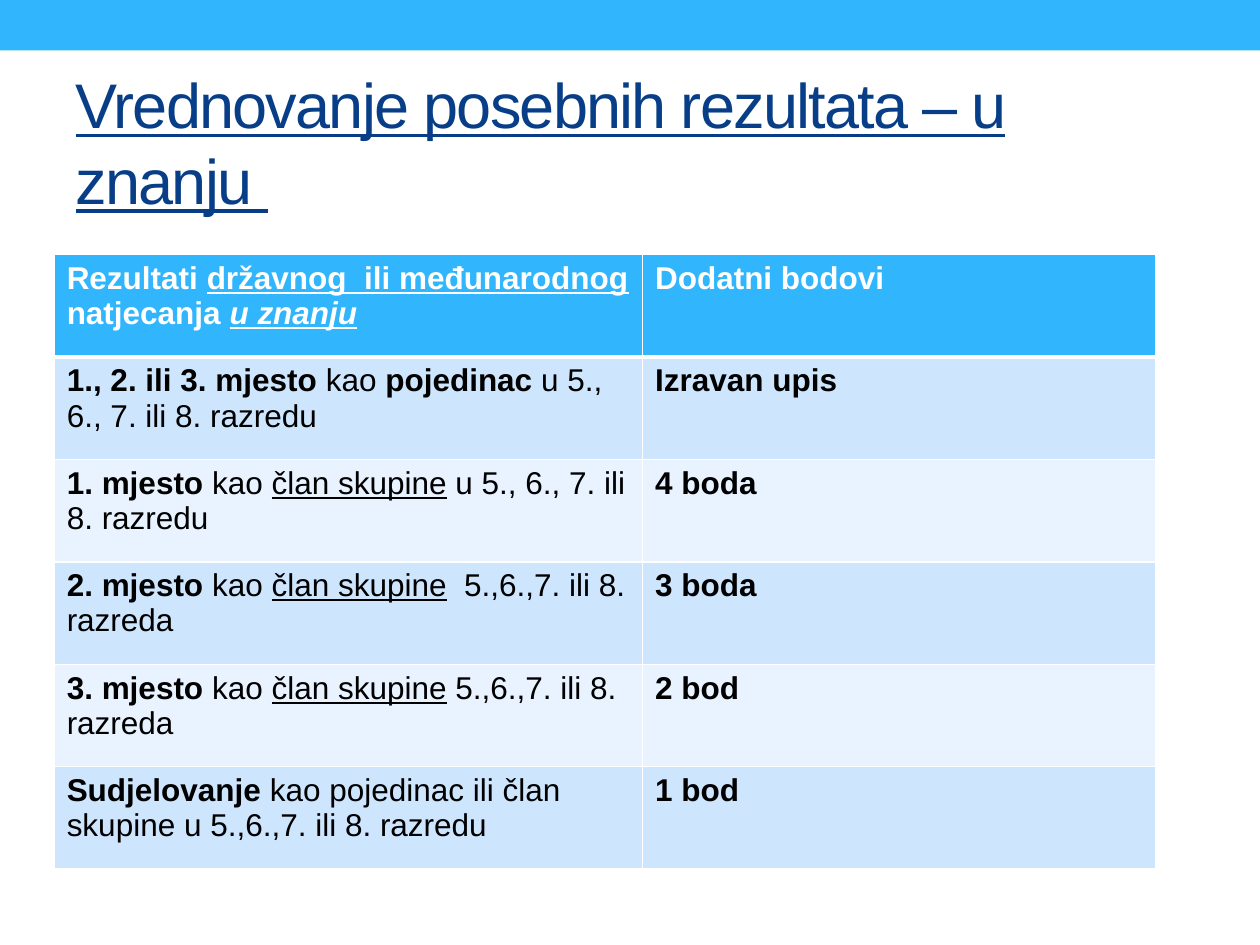
"""Build a slide with a table of points for special results in knowledge competitions."""
import pptx
import pptx.dml.color
import pptx.enum.shapes
import pptx.enum.text
import pptx.oxml
import pptx.oxml.ns
import pptx.util
from pptx.util import Inches

FONT = "Arial"
SKY, NAVY, WHITE, BLACK = "31B6FD", "073E87", "FFFFFF", "000000"
BANDS = ("CEE5FE", "E8F3FF")

# Each run is a text and its style letters: b bold, i italic, u underlined.
HEADER = (
    [("Rezultati ", "b"), ("državnog  ili međunarodnog", "bu"),
     (" natjecanja ", "b"), ("u znanju", "biu")],
    "Dodatni bodovi",
)


def group_result(place, grades):
    """Return the runs for a place won as a member of a group."""
    return [(f"{place}. mjesto ", "b"), ("kao ", ""), ("član skupine", "u"), (grades, "")]


RESULTS = [
    ([("1., 2. ili 3. mjesto ", "b"), ("kao ", ""), ("pojedinac ", "b"),
      ("u 5., 6., 7. ili 8. razredu", "")], "Izravan upis"),
    (group_result(1, " u 5., 6., 7. ili 8. razredu"), "4 boda"),
    (group_result(2, "  5.,6.,7. ili 8. razreda"), "3 boda"),
    (group_result(3, " 5.,6.,7. ili 8. razreda"), "2 bod"),
    ([("Sudjelovanje ", "b"),
      ("kao pojedinac ili član skupine u 5.,6.,7. ili 8. razredu", "")], "1 bod"),
]


def rgb(color):
    """Turn a hex string into a colour."""
    return pptx.dml.color.RGBColor.from_string(color)


def add_top_band(slide):
    """Draw the coloured band along the top edge."""
    band = slide.shapes.add_shape(
        pptx.enum.shapes.MSO_SHAPE.RECTANGLE, 0, 0, Inches(10), Inches(0.4))
    band.shadow.inherit = False
    band.fill.solid()
    band.fill.fore_color.rgb = rgb(SKY)
    band.line.fill.background()


def set_title(slide, text):
    """Place and format the title."""
    title = slide.shapes.title
    title.left, title.top = Inches(0.5), Inches(0.58)
    title.width, title.height = Inches(9), Inches(1.08)
    frame = title.text_frame
    frame.text = text
    frame.auto_size = pptx.enum.text.MSO_AUTO_SIZE.NONE
    frame.vertical_anchor = pptx.enum.text.MSO_ANCHOR.MIDDLE
    paragraph = frame.paragraphs[0]
    paragraph.alignment = pptx.enum.text.PP_ALIGN.LEFT
    paragraph.font.name = FONT
    paragraph.font.size = pptx.util.Pt(36)
    paragraph.font.underline = True
    paragraph.font.color.rgb = rgb(NAVY)
    paragraph.runs[0].font._element.set("spc", "-100")


def set_borders(cell, bottom):
    """Give a cell white borders, with the bottom width in points."""
    properties = cell._tc.get_or_add_tcPr()
    widths = {"lnL": 1, "lnR": 1, "lnT": 1, "lnB": bottom}
    for position, (side, width) in enumerate(widths.items()):
        properties.insert(position, pptx.oxml.parse_xml(
            f'<a:{side} {pptx.oxml.ns.nsdecls("a")} w="{pptx.util.Pt(width)}">'
            f'<a:solidFill><a:srgbClr val="{WHITE}"/></a:solidFill></a:{side}>'))


def fill_cell(cell, runs, background, color, bottom=1):
    """Write styled runs into a cell and colour it."""
    cell.fill.solid()
    cell.fill.fore_color.rgb = rgb(background)
    set_borders(cell, bottom)
    paragraph = cell.text_frame.paragraphs[0]
    for text, style in runs:
        run = paragraph.add_run()
        run.text = text
        run.font.name = FONT
        run.font.size = pptx.util.Pt(18)
        run.font.color.rgb = rgb(color)
        run.font.bold = "b" in style
        run.font.italic = "i" in style
        run.font.underline = "u" in style


def add_points_table(slide):
    """Add the table of results and their points."""
    rows = [HEADER, *RESULTS]
    table = slide.shapes.add_table(
        len(rows), 2, Inches(0.43), Inches(2.02), Inches(8.74), Inches(4.88)).table
    for column, width in zip(table.columns, (4.67, 4.07)):
        column.width = Inches(width)
    for index, (result, points) in enumerate(rows):
        if index == 0:
            look = (SKY, WHITE, 3)
        else:
            look = (BANDS[(index - 1) % 2], BLACK)
        fill_cell(table.cell(index, 0), result, *look)
        fill_cell(table.cell(index, 1), [(points, "b")], *look)


def main():
    """Build and save the slide."""
    presentation = pptx.Presentation()
    presentation.slide_width, presentation.slide_height = Inches(10), Inches(7.5)
    slide = presentation.slides.add_slide(presentation.slide_layouts[5])
    add_top_band(slide)
    set_title(slide, "Vrednovanje posebnih rezultata – u znanju ")
    add_points_table(slide)
    presentation.save("out.pptx")


if __name__ == "__main__":
    main()
